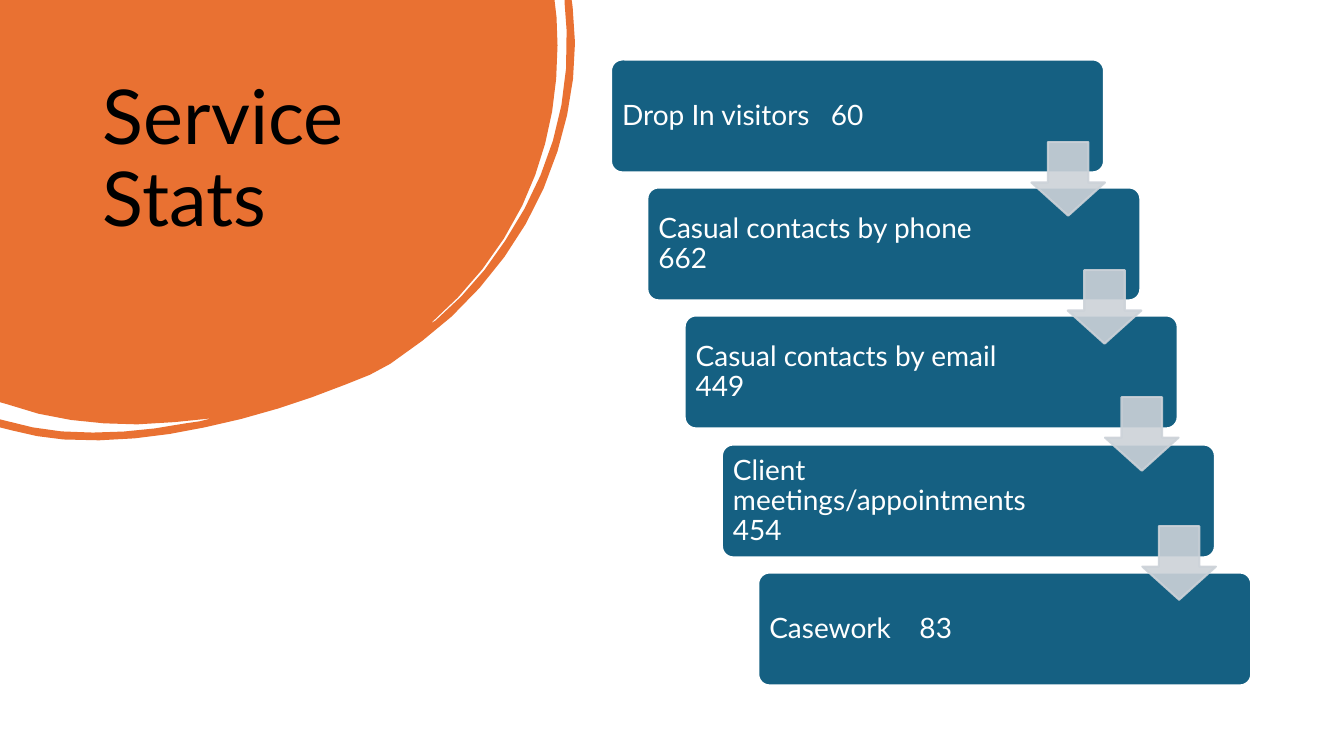
import math

from lxml import etree
from pptx import Presentation, util as u
from pptx.dml.color import RGBColor
from pptx.enum import shapes, text
from pptx.oxml.ns import qn

PX = 9144  # 100 px to the inch
HUES = {"blob": "E97132", "card": "156082", "arrow": "CCD2D8",
        "white": "FFFFFF", "black": "000000"}


def paint(shape, fill, line=None):
    """Set a flat fill and, if a line hue is named, a 1.5 pt outline."""
    shape.shadow.inherit = False
    shape.fill.solid()
    shape.fill.fore_color.rgb = RGBColor.from_string(HUES[fill])
    if line:
        shape.line.color.rgb = RGBColor.from_string(HUES[line])
        shape.line.width = u.Pt(1.5)
    else:
        shape.line.fill.background()


def write(para, words, size, hue):
    para.alignment = text.PP_ALIGN.LEFT
    para.line_spacing = 0.9
    run = para.add_run()
    run.text = words
    run.font.name = "Lato"
    run.font.size = u.Pt(size)
    run.font.color.rgb = RGBColor.from_string(HUES[hue])


deck = Presentation()
deck.slide_width, deck.slide_height = 1333 * PX, 750 * PX
slide = deck.slides.add_slide(deck.slide_layouts[5])
items = slide.shapes

# Corner blob: two numbers are a line end, six are a cubic curve
steps = [
    (550, 0), (552, 17), (553, 26, 553, 36, 553, 45),
    (553, 101, 542, 154, 518, 204), (496, 249, 465, 288, 427, 321),
    (429, 321, 430, 319, 432, 318), (459, 295, 482, 269, 501, 239),
    (543, 176, 565, 107, 562, 30), (562, 21, 561, 12, 560, 3),
    (560, 0), (567, 0), (568, 7), (574, 54, 568, 102, 553, 150),
    (533, 214, 497, 268, 448, 314), (439, 323, 429, 331, 419, 338),
    (409, 346, 399, 353, 387, 361), (375, 369, 360, 375, 344, 381),
    (299, 399, 252, 414, 203, 424), (157, 434, 110, 439, 63, 436),
    (45, 434, 28, 432, 12, 427), (0, 424), (0, 416), (4, 417),
    (23, 423, 42, 426, 61, 428), (103, 431, 143, 428, 184, 420),
    (189, 420, 193, 419, 198, 418), (202, 417, 206, 416, 210, 415),
    (186, 418, 161, 420, 136, 421), (92, 421, 48, 416, 7, 401),
    (0, 399),
]
dots = [(0, 0)]
for step in steps:
    if len(step) == 2:
        dots.append(step)
        continue
    ends = [dots[-1], step[:2], step[2:4], step[4:]]
    count = math.ceil(math.dist(ends[0], ends[3]) / 40)
    for n in range(1, count + 1):
        t = n / count
        parts = ((1 - t) ** 3, 3 * t * (1 - t) ** 2, 3 * t * t * (1 - t), t ** 3)
        dots.append(tuple(sum(w * e[axis] for w, e in zip(parts, ends))
                          for axis in (0, 1)))
pen = items.build_freeform(0, 0, scale=1.0)
pen.add_line_segments([(x * PX, y * PX) for x, y in dots[1:]], close=True)
paint(pen.convert_to_shape(), "blob")

title = items.title
title.left, title.top, title.width, title.height = [n * PX for n in (92, 74, 352, 222)]
items._spTree.append(title._element)  # in front of the blob
frame = title.text_frame
frame.word_wrap = True
frame.auto_size = text.MSO_AUTO_SIZE.NONE
frame.vertical_anchor = text.MSO_ANCHOR.TOP
write(frame.paragraphs[0], "Service Stats", 54, "black")

# Label, count, box width, and the tab stop of the count (None: it wraps)
stats = [
    ("Drop In visitors", "60", 356, 207),
    ("Casual contacts by phone", "662", 374, None),
    ("Casual contacts by email", "449", 374, None),
    ("Client meetings/appointments", "454", 374, None),
    ("Casework", "83", 374, 149),
]
last = len(stats) - 1
spots = [(606 + round(146 * i / last), 59 + round(509 * i / last))
         for i in range(len(stats))]
stairs = items.add_group_shape().shapes

for (x, y), (label, count, width, stop) in zip(spots, stats):
    card = stairs.add_shape(shapes.MSO_SHAPE.ROUNDED_RECTANGLE,
                            x * PX, y * PX, 489 * PX, 112 * PX)
    card.adjustments[0] = 0.1
    paint(card, "card", "white")
    box = stairs.add_textbox((x + 3) * PX, (y + 4) * PX, width * PX, 105 * PX)
    frame = box.text_frame
    frame.word_wrap = True
    frame.vertical_anchor = text.MSO_ANCHOR.MIDDLE
    frame.margin_left = frame.margin_top = frame.margin_bottom = 8 * PX
    frame.margin_right = (8 if stop else 45) * PX
    para = frame.paragraphs[0]
    write(para, label + ("\t" if stop else " ") + count, 20, "white")
    if stop:
        tabs = etree.SubElement(para._p.get_or_add_pPr(), qn("a:tabLst"))
        etree.SubElement(tabs, qn("a:tab"), pos=str(stop * PX), algn="l")

for (x, _), y in zip(spots, (141, 268, 394, 522)):
    arrow = stairs.add_shape(shapes.MSO_SHAPE.DOWN_ARROW,
                             (x + 417) * PX, y * PX, 73 * PX, 73 * PX)
    arrow.adjustments[0], arrow.adjustments[1] = 0.55, 0.45
    paint(arrow, "arrow", "arrow")
    for hue in arrow._element.spPr.iter(qn("a:srgbClr")):
        etree.SubElement(hue, qn("a:alpha"), val="90000")

deck.save("out.pptx")
